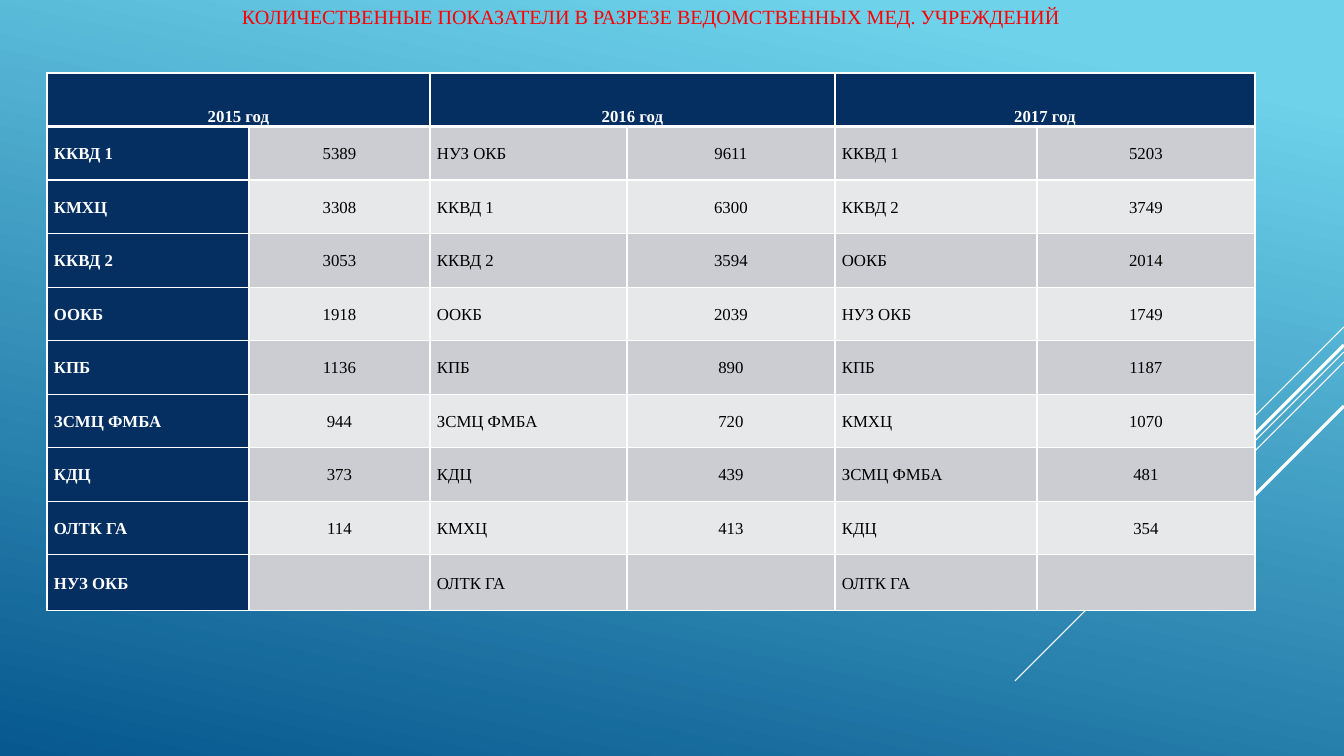
import dataclasses

import lxml.etree
import pptx
import pptx.dml.color
import pptx.enum.shapes
import pptx.enum.text
import pptx.oxml.ns
import pptx.util

SLIDE_W, SLIDE_H = 1344, 756
EMU_PER_PX = 12192000 / SLIDE_W
TABLE_LEFT, TABLE_TOP = 47, 73
COLUMN_WIDTHS = [202, 181, 197, 208, 202, 218]
ROWS_HEIGHT, LAST_ROW_HEIGHT = 482, 56

TITLE = "КОЛИЧЕСТВЕННЫЕ ПОКАЗАТЕЛИ В РАЗРЕЗЕ ВЕДОМСТВЕННЫХ МЕД. УЧРЕЖДЕНИЙ"
YEARS = {
    "2015 год": [
        ("ККВД 1", "5389"), ("КМХЦ", "3308"), ("ККВД 2", "3053"),
        ("ООКБ", "1918"), ("КПБ", "1136"), ("ЗСМЦ ФМБА", "944"),
        ("КДЦ", "373"), ("ОЛТК ГА", "114"), ("НУЗ ОКБ", ""),
    ],
    "2016 год": [
        ("НУЗ ОКБ", "9611"), ("ККВД 1", "6300"), ("ККВД 2", "3594"),
        ("ООКБ", "2039"), ("КПБ", "890"), ("ЗСМЦ ФМБА", "720"),
        ("КДЦ", "439"), ("КМХЦ", "413"), ("ОЛТК ГА", ""),
    ],
    "2017 год": [
        ("ККВД 1", "5203"), ("ККВД 2", "3749"), ("ООКБ", "2014"),
        ("НУЗ ОКБ", "1749"), ("КПБ", "1187"), ("КМХЦ", "1070"),
        ("ЗСМЦ ФМБА", "481"), ("КДЦ", "354"), ("ОЛТК ГА", ""),
    ],
}
RAYS = [(327, 101, 0.75), (352, 329, 0.75), (362, 209, 0.75),
        (345, 193, 2.25), (406, 140, 2.25)]


@dataclasses.dataclass(frozen=True)
class Theme:
    font: str = "Times New Roman"
    title_size: float = 14.4
    cell_size: float = 12
    sky: str = "6ED2EB"
    deep: str = "06588E"
    title: str = "FF0000"
    navy: str = "052F61"
    bands: tuple = ("CCCDD2", "E7E8EA")
    white: str = "FFFFFF"
    black: str = "000000"
    grid: float = 1
    header_rule: float = 3


THEME = Theme()


def px(length):
    return pptx.util.Emu(round(length * EMU_PER_PX))


def rgb(color):
    return pptx.dml.color.RGBColor.from_string(color)


def style_paragraph(paragraph, size, color, bold=False, centered=True):
    align = pptx.enum.text.PP_ALIGN
    paragraph.alignment = align.CENTER if centered else align.LEFT
    paragraph.font.name = THEME.font
    paragraph.font.size = pptx.util.Pt(size)
    paragraph.font.bold = bold
    paragraph.font.color.rgb = rgb(color)


def paint_background(slide):
    fill = slide.background.fill
    fill.gradient()
    fill.gradient_angle = 360 - 102
    for stop, position, color in zip(fill.gradient_stops, (0.1, 1), (THEME.sky, THEME.deep)):
        stop.position = position
        stop.color.rgb = rgb(color)


def add_ray(slide, top, run, weight):
    ray = slide.shapes.add_connector(
        pptx.enum.shapes.MSO_CONNECTOR.STRAIGHT,
        px(SLIDE_W), px(top), px(SLIDE_W - run), px(top + run))
    ray.line.color.rgb = rgb(THEME.white)
    ray.line.width = pptx.util.Pt(weight)
    properties = ray.element.find(pptx.oxml.ns.qn("p:spPr"))
    lxml.etree.SubElement(properties, pptx.oxml.ns.qn("a:effectLst"))


def add_title(slide):
    frame = slide.shapes.add_textbox(
        px(TABLE_LEFT), px(0), px(sum(COLUMN_WIDTHS)), px(32)).text_frame
    frame.word_wrap = True
    frame.vertical_anchor = pptx.enum.text.MSO_ANCHOR.MIDDLE
    frame.margin_top = frame.margin_bottom = 0
    frame.text = TITLE
    style_paragraph(frame.paragraphs[0], THEME.title_size, THEME.title)


def set_borders(cell, top, bottom):
    properties = cell._tc.get_or_add_tcPr()
    widths = {"lnL": THEME.grid, "lnR": THEME.grid, "lnT": top, "lnB": bottom}
    for index, (side, width) in enumerate(widths.items()):
        border = lxml.etree.Element(
            pptx.oxml.ns.qn(f"a:{side}"), w=str(pptx.util.Pt(width)))
        fill = lxml.etree.SubElement(border, pptx.oxml.ns.qn("a:solidFill"))
        lxml.etree.SubElement(fill, pptx.oxml.ns.qn("a:srgbClr"), val=THEME.white)
        properties.insert(index, border)


def fill_cell(cell, text, row, column):
    header = row == 0
    emphasized = header or column == 0
    background = THEME.navy if emphasized else THEME.bands[(row - 1) % 2]
    cell.fill.solid()
    cell.fill.fore_color.rgb = rgb(background)
    set_borders(cell,
                top=THEME.header_rule if row == 1 else THEME.grid,
                bottom=THEME.header_rule if header else THEME.grid)
    anchor = pptx.enum.text.MSO_ANCHOR
    cell.vertical_anchor = anchor.BOTTOM if header else anchor.MIDDLE
    cell.margin_left = cell.margin_right = px(7)
    cell.margin_top = cell.margin_bottom = 0
    cell.text = text
    paragraph = cell.text_frame.paragraphs[0]
    paragraph.line_spacing = 1.07
    style_paragraph(paragraph, THEME.cell_size,
                    THEME.white if emphasized else THEME.black,
                    bold=emphasized, centered=header or column % 2 == 1)


def add_indicator_table(slide):
    header = [text for year in YEARS for text in (year, "")]
    body = [[text for pair in rank for text in pair] for rank in zip(*YEARS.values())]
    rows = [header, *body]
    even_rows = len(body)
    table = slide.shapes.add_table(
        len(rows), len(header), px(TABLE_LEFT), px(TABLE_TOP),
        px(sum(COLUMN_WIDTHS)), px(ROWS_HEIGHT + LAST_ROW_HEIGHT)).table
    table.first_col = True
    for column, width in zip(table.columns, COLUMN_WIDTHS):
        column.width = px(width)
    for row in table.rows:
        row.height = px(ROWS_HEIGHT / even_rows)
    table.rows[even_rows].height = px(LAST_ROW_HEIGHT)
    for row, texts in enumerate(rows):
        for column, text in enumerate(texts):
            fill_cell(table.cell(row, column), text, row, column)
    for column in range(0, len(header), 2):
        table.cell(0, column).merge(table.cell(0, column + 1))


def main():
    presentation = pptx.Presentation()
    presentation.slide_width = px(SLIDE_W)
    presentation.slide_height = px(SLIDE_H)
    slide = presentation.slides.add_slide(presentation.slide_layouts[6])
    paint_background(slide)
    for top, run, weight in RAYS:
        add_ray(slide, top, run, weight)
    add_title(slide)
    add_indicator_table(slide)
    presentation.save("out.pptx")


if __name__ == "__main__":
    main()
